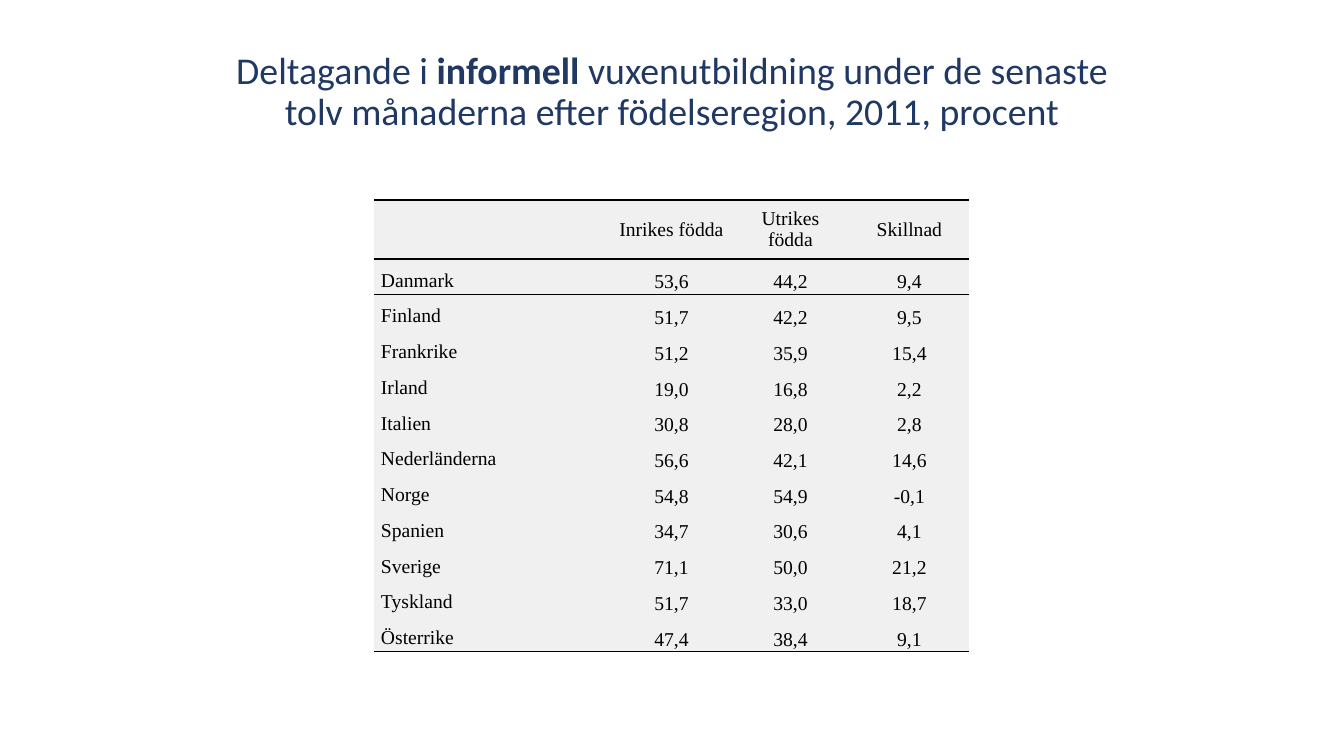
from typing import NamedTuple

from lxml.etree import SubElement
from pptx import Presentation
from pptx.dml.color import RGBColor
from pptx.enum.text import MSO_ANCHOR as Anchor, MSO_AUTO_SIZE as AutoSize, PP_ALIGN as Align
from pptx.oxml.ns import qn
from pptx.util import Emu, Pt

PX_PER_INCH = 100.8
NAVY, BLACK, PALE_GREY = "203864", "000000", "F0F0F0"
NO_GRID_STYLE = "{2D5ABB26-0587-4C30-8999-92F81FD0307C}"

TABLE_LEFT, TABLE_TOP = 374, 200
COUNTRY_WIDTH, VALUE_WIDTH = 238, 119
HEADER_HEIGHT, BODY_HEIGHT = 59, 393


class Participation(NamedTuple):
    country: str
    native_born: str
    foreign_born: str
    difference: str


HEADER = Participation("", "Inrikes födda", "Utrikes födda", "Skillnad")
COUNTRIES = [
    Participation("Danmark", "53,6", "44,2", "9,4"),
    Participation("Finland", "51,7", "42,2", "9,5"),
    Participation("Frankrike", "51,2", "35,9", "15,4"),
    Participation("Irland", "19,0", "16,8", "2,2"),
    Participation("Italien", "30,8", "28,0", "2,8"),
    Participation("Nederländerna", "56,6", "42,1", "14,6"),
    Participation("Norge", "54,8", "54,9", "-0,1"),
    Participation("Spanien", "34,7", "30,6", "4,1"),
    Participation("Sverige", "71,1", "50,0", "21,2"),
    Participation("Tyskland", "51,7", "33,0", "18,7"),
    Participation("Österrike", "47,4", "38,4", "9,1"),
]


def px(length: int) -> Emu:
    return Emu(round(length * 914400 / PX_PER_INCH))


def colour(value: str) -> RGBColor:
    return RGBColor.from_string(value)


def add_span(para, text: str, *, font: str, size: int, ink: str, bold: bool = False) -> None:
    span = para.add_run()
    span.text = text
    span.font.name = font
    span.font.size = Pt(size)
    span.font.bold = bold
    span.font.color.rgb = colour(ink)


def add_rule(cell, side: str) -> None:
    """Draw a thin black line along one side of a cell: lnT or lnB."""
    properties = cell._tc.get_or_add_tcPr()
    line = SubElement(properties, qn(f"a:{side}"), w=str(Pt(1)))
    fill = SubElement(line, qn("a:solidFill"))
    SubElement(fill, qn("a:srgbClr"), val=BLACK)


def fill_cell(cell, text: str, *, rules: list[str], align: Align,
              anchor: Anchor, spacing: float) -> None:
    for side in rules:
        add_rule(cell, side)
    cell.fill.solid()
    cell.fill.fore_color.rgb = colour(PALE_GREY)
    cell.margin_left = cell.margin_right = px(7)
    cell.margin_top = cell.margin_bottom = 0
    cell.vertical_anchor = anchor
    if text:
        para = cell.text_frame.paragraphs[0]
        para.alignment = align
        para.line_spacing = spacing
        add_span(para, text, font="Times New Roman", size=14, ink=BLACK)


def add_title(page) -> None:
    box = page.shapes.title
    box.left, box.top, box.width, box.height = px(219), px(30), px(906), px(126)
    frame = box.text_frame
    frame.word_wrap = True
    frame.auto_size = AutoSize.NONE
    frame.vertical_anchor = Anchor.MIDDLE
    para = frame.paragraphs[0]
    para.alignment = Align.CENTER
    para.line_spacing = 0.9
    for text, bold in (
        ("Deltagande i ", False),
        ("informell", True),
        (" vuxenutbildning under de senaste tolv månaderna"
         " efter födelseregion, 2011, procent", False),
    ):
        add_span(para, text, font="Calibri", size=27, ink=NAVY, bold=bold)


def add_participation_table(page) -> None:
    records = [HEADER, *COUNTRIES]
    last = len(records) - 1
    columns = len(HEADER)
    width = COUNTRY_WIDTH + VALUE_WIDTH * (columns - 1)
    table = page.shapes.add_table(
        len(records), columns, px(TABLE_LEFT), px(TABLE_TOP),
        px(width), px(HEADER_HEIGHT + BODY_HEIGHT)).table
    table.first_row = table.horz_banding = False
    table._tbl.tblPr.find(qn("a:tableStyleId")).text = NO_GRID_STYLE

    # Column widths and row heights
    for index, column in enumerate(table.columns):
        column.width = px(VALUE_WIDTH if index else COUNTRY_WIDTH)
    for index, row in enumerate(table.rows):
        row.height = Emu(px(BODY_HEIGHT) // last) if index else px(HEADER_HEIGHT)

    # Cells, with rules around the header and below the last country
    for row, record in enumerate(records):
        rules = ["lnT"] if row in (0, 1) else []
        if row in (0, last):
            rules.append("lnB")
        for column, text in enumerate(record):
            is_country = row > 0 and column == 0
            fill_cell(table.cell(row, column), text, rules=rules,
                      align=Align.JUSTIFY if is_country else Align.CENTER,
                      anchor=Anchor.TOP if is_country else Anchor.MIDDLE,
                      spacing=1.5 if row else 1.0)


def main() -> None:
    deck = Presentation()
    deck.slide_width, deck.slide_height = px(1344), px(756)
    page = deck.slides.add_slide(deck.slide_layouts[5])
    add_title(page)
    add_participation_table(page)
    deck.save("out.pptx")


if __name__ == "__main__":
    main()
